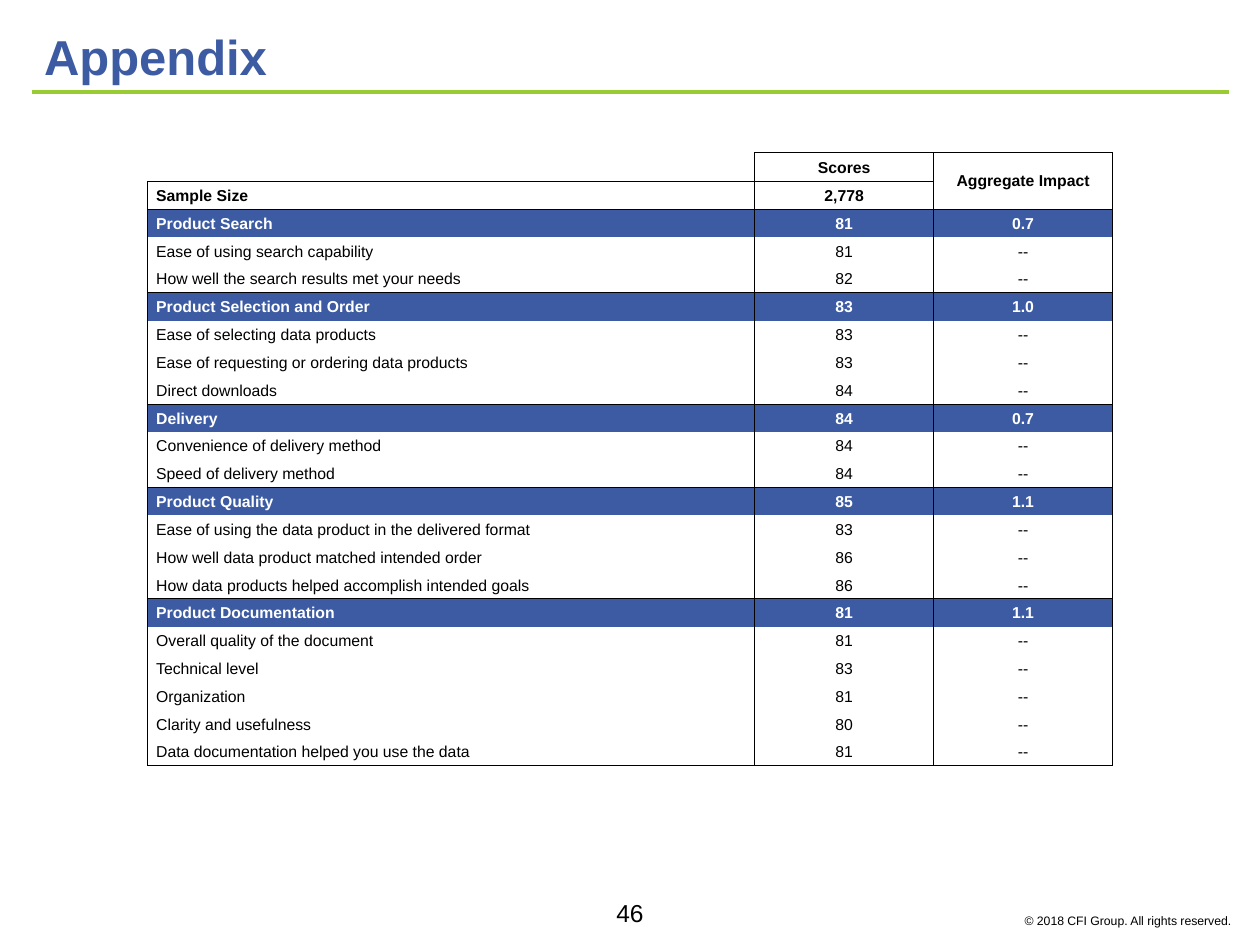
from dataclasses import dataclass

from lxml import etree
from pptx import Presentation
from pptx.dml.color import RGBColor
from pptx.enum.shapes import MSO_CONNECTOR
from pptx.enum.text import MSO_ANCHOR, PP_ALIGN
from pptx.oxml.ns import qn
from pptx.util import Inches, Pt

LEFT, CENTER, RIGHT = PP_ALIGN.LEFT, PP_ALIGN.CENTER, PP_ALIGN.RIGHT
MIDDLE = MSO_ANCHOR.MIDDLE
STRAIGHT = MSO_CONNECTOR.STRAIGHT


@dataclass(frozen=True)
class Theme:
    font: str = "Arial"
    blue: str = "3C5BA2"
    green: str = "99CC33"
    black: str = "000000"
    white: str = "FFFFFF"
    title: float = 28
    cell: float = 9
    page: float = 14
    note: float = 7
    rule: float = 2.25
    border: float = 0.5


THEME = Theme()

GROUPS = [
    (("Product Search", "81", "0.7"), [
        ("Ease of using search capability", "81"),
        ("How well the search results met your needs", "82"),
    ]),
    (("Product Selection and Order", "83", "1.0"), [
        ("Ease of selecting data products", "83"),
        ("Ease of requesting or ordering data products", "83"),
        ("Direct downloads", "84"),
    ]),
    (("Delivery", "84", "0.7"), [
        ("Convenience of delivery method", "84"),
        ("Speed of delivery method", "84"),
    ]),
    (("Product Quality", "85", "1.1"), [
        ("Ease of using the data product in the delivered format", "83"),
        ("How well data product matched intended order", "86"),
        ("How data products helped accomplish intended goals", "86"),
    ]),
    (("Product Documentation", "81", "1.1"), [
        ("Overall quality of the document", "81"),
        ("Technical level", "83"),
        ("Organization", "81"),
        ("Clarity and usefulness", "80"),
        ("Data documentation helped you use the data", "81"),
    ]),
]


def write(tf, text, size, color, align=LEFT, bold=False):
    tf.text = text
    p = tf.paragraphs[0]
    p.alignment = align
    for r in p.runs:
        r.font.name = THEME.font
        r.font.size = Pt(size)
        r.font.bold = bold
        r.font.color.rgb = RGBColor.from_string(color)


def add_title(slide, x, y, w, h):
    sp = slide.shapes.title
    sp.left, sp.top, sp.width, sp.height = map(Inches, (x, y, w, h))
    write(sp.text_frame, "Appendix", THEME.title, THEME.blue, bold=True)
    sp.text_frame.vertical_anchor = MIDDLE
    bottom = Inches(y + h)
    line = slide.shapes.add_connector(STRAIGHT, Inches(x), bottom, Inches(x + w), bottom)
    line.line.color.rgb = RGBColor.from_string(THEME.green)
    line.line.width = Pt(THEME.rule)
    etree.SubElement(line._element.spPr, qn("a:effectLst"))


def add_label(slide, text, size, align, x, y, w, h):
    sp = slide.shapes.add_textbox(*map(Inches, (x, y, w, h)))
    tf = sp.text_frame
    tf.word_wrap = True
    write(tf, text, size, THEME.black, align)


def set_borders(cell, sides):
    tc_pr = cell._tc.get_or_add_tcPr()
    for side in "LRTB":
        ln = etree.SubElement(tc_pr, qn(f"a:ln{side}"), w=str(Pt(THEME.border)))
        if side in sides:
            fill = etree.SubElement(ln, qn("a:solidFill"))
            etree.SubElement(fill, qn("a:srgbClr"), val=THEME.black)
        else:
            etree.SubElement(ln, qn("a:noFill"))


def fill_cell(cell, text, col, sides, bold=False, band=False):
    cell.margin_left = Inches(0.01 if col else 0.07)
    cell.margin_top = cell.margin_right = Inches(0.01)
    cell.margin_bottom = 0
    cell.vertical_anchor = MIDDLE
    color = THEME.white if band else THEME.black
    write(cell.text_frame, text, THEME.cell, color, CENTER if col else LEFT, bold)
    if not text:
        p = cell.text_frame.paragraphs[0]
        etree.SubElement(p._p, qn("a:endParaRPr"), sz=str(int(THEME.cell * 100)))
    set_borders(cell, sides)
    if band:
        cell.fill.solid()
        cell.fill.fore_color.rgb = RGBColor.from_string(THEME.blue)
    else:
        cell.fill.background()


def add_scores(slide, x, y, w, h):
    rows = [(("", "Scores", "Aggregate Impact"), "LRTB", True, False),
            (("Sample Size", "2,778", ""), "LRTB", True, False)]
    for heading, items in GROUPS:
        rows.append((heading, "LRT", True, True))
        for i, item in enumerate(items, 1):
            sides = "LRB" if i == len(items) else "LR"
            rows.append(((*item, "--"), sides, False, False))

    box = map(Inches, (x, y, w, h))
    table = slide.shapes.add_table(len(rows), 3, *box).table
    table.first_row = table.horz_banding = False
    score_w = 1.42
    for col, width in zip(table.columns, (w - 2 * score_w, score_w, score_w)):
        col.width = Inches(width)
    head_h = 0.23
    for i, row in enumerate(table.rows):
        row.height = Inches((h - head_h) / (len(rows) - 1) if i else head_h)

    for i, (texts, sides, bold, band) in enumerate(rows):
        for j, text in enumerate(texts):
            corner = i == j == 0
            fill_cell(table.cell(i, j), text, j, "RB" if corner else sides, bold, band)
    table.cell(0, 2).merge(table.cell(1, 2))


def main():
    prs = Presentation()
    prs.slide_width, prs.slide_height = Inches(10), Inches(7.5)
    slide = prs.slides.add_slide(prs.slide_layouts[5])
    add_title(slide, 0.25, 0.15, 9.5, 0.58)
    add_scores(slide, 1.17, 1.21, 7.66, 4.87)
    add_label(slide, "46", THEME.page, CENTER, 4.71, 7.08, 0.58, 0.34)
    add_label(slide, "© 2018 CFI Group. All rights reserved.", THEME.note, RIGHT,
              7.59, 7.2, 2.28, 0.22)
    prs.save("out.pptx")


if __name__ == "__main__":
    main()
